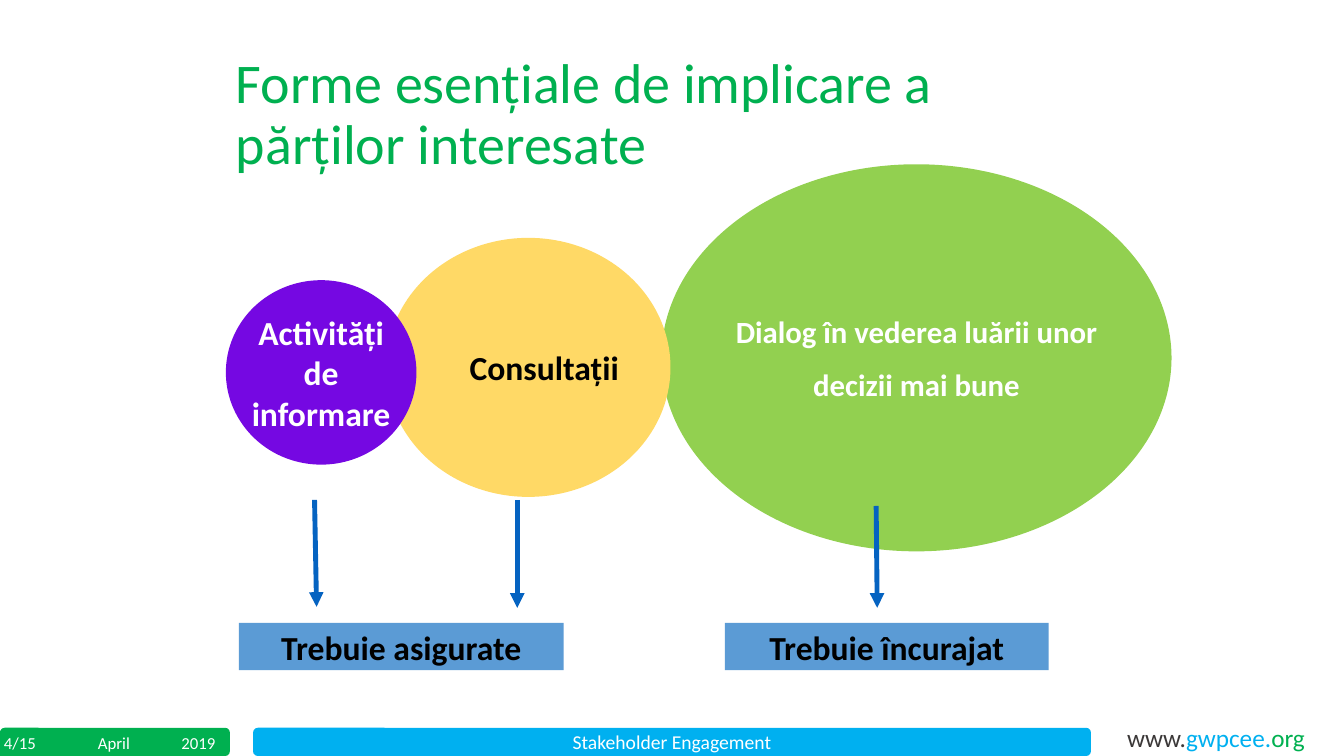
from lxml import etree
from pptx import Presentation
from pptx import util as u
from pptx.dml.color import RGBColor
from pptx.enum import shapes, text
from pptx.oxml.ns import qn

PX = 9144  # 100 px to the inch
SHAPE, ALIGN, ANCHOR = shapes.MSO_SHAPE, text.PP_ALIGN, text.MSO_ANCHOR
GREEN, BLUE, WHITE, BLACK = "00B050", "00B0F0", "FFFFFF", "000000"

deck = Presentation()
deck.slide_width, deck.slide_height = 1333 * PX, 750 * PX
slide = deck.slides.add_slide(deck.slide_layouts[5])


def rgb(code):
    return RGBColor.from_string(code)


def add_block(kind, box, fill, lines=(), size=12, color=WHITE, bold=False,
              align=ALIGN.CENTER, wrap=False, anchor=ANCHOR.MIDDLE):
    """Add a filled shape, or a text box when kind is None."""
    box = [n * PX for n in box]
    if kind is None:
        block = slide.shapes.add_textbox(*box)
    else:
        block = slide.shapes.add_shape(kind, *box)
        block.shadow.inherit = False
        block.fill.solid()
        block.fill.fore_color.rgb = rgb(fill)
        block.line.fill.background()
    frame = block.text_frame
    frame.word_wrap = wrap
    frame.vertical_anchor = anchor
    frame.text = "\n".join(lines)
    for line in frame.paragraphs:
        line.alignment = align
        line.font.name, line.font.size = "Calibri", u.Pt(size)
        line.font.bold, line.font.color.rgb = bold, rgb(color)
    return block


# Title
title = slide.shapes.title
title.left, title.top, title.width, title.height = [n * PX for n in (224, 50, 815, 123)]
title.text_frame.text = "Forme esențiale de implicare a părților interesate"
title.text_frame.word_wrap = True
title.text_frame.auto_size = text.MSO_AUTO_SIZE.NONE
title.text_frame.vertical_anchor = ANCHOR.TOP
heading = title.text_frame.paragraphs[0]
heading.alignment, heading.line_spacing = ALIGN.LEFT, 0.9
heading.font.name, heading.font.size = "Calibri", u.Pt(40)
heading.font.color.rgb = rgb(GREEN)

# Footer bars
add_block(SHAPE.ROUNDED_RECTANGLE, (0, 722, 228, 28), GREEN)
add_block(SHAPE.ROUNDED_RECTANGLE, (251, 722, 831, 28), BLUE,
          ["Stakeholder Engagement"], 14)
add_block(SHAPE.RECTANGLE, (0, 725, 52, 25), GREEN)

# Footer texts
for label, left, width, align, anchor in [
    ("April", 61, 104, ALIGN.CENTER, ANCHOR.MIDDLE),
    ("2019", 170, 58, ALIGN.LEFT, ANCHOR.TOP),
    ("4/15", -6, 74, ALIGN.LEFT, ANCHOR.TOP),
]:
    add_block(None, (left, 722, width, 30), None, [label],
              align=align, wrap=True, anchor=anchor)

# Web address
address = add_block(None, (1108, 712, 199, 40), None, size=18, align=ALIGN.LEFT,
                    wrap=True, anchor=ANCHOR.TOP).text_frame.paragraphs[0]
for part, color in [("www.", "3B3838"), ("gwpcee.", BLUE), ("org", GREEN)]:
    run = address.add_run()
    run.text = part
    run.font.color.rgb = rgb(color)

# Forms of engagement, widest at the back
dialogue = add_block(SHAPE.OVAL, (656, 163, 506, 384), "92D050",
                     ["Dialog în vederea luării unor", "decizii mai bune"], 22, bold=True)
dialogue.text_frame.paragraphs[1].space_before = u.Pt(11)
add_block(SHAPE.OVAL, (383, 236, 282, 257), "FFD966", ["Consultații"], 24, BLACK,
          bold=True, align=ALIGN.RIGHT, wrap=True)
add_block(SHAPE.OVAL, (224, 278, 189, 183), "7508E2",
          ["Activități", "de", "informare"], 24, bold=True)

# Requirements
for label, left, width in [("Trebuie asigurate", 237, 322), ("Trebuie încurajat", 719, 321)]:
    add_block(SHAPE.RECTANGLE, (left, 618, width, 47), "5B9BD5", [label], 24, BLACK, bold=True)

# Arrows from forms to requirements
for x1, y1, x2, y2 in [(312, 496, 314, 602), (513, 496, 513, 603), (869, 502, 870, 603)]:
    arrow = slide.shapes.add_connector(shapes.MSO_CONNECTOR.STRAIGHT,
                                       x1 * PX, y1 * PX, x2 * PX, y2 * PX)
    arrow.line.color.rgb = rgb("0563C1")
    arrow.line.width = u.Pt(3.5)
    etree.SubElement(arrow.line._get_or_add_ln(), qn("a:tailEnd"), type="triangle")
    etree.SubElement(arrow._element.spPr, qn("a:effectLst"))

deck.save("out.pptx")
